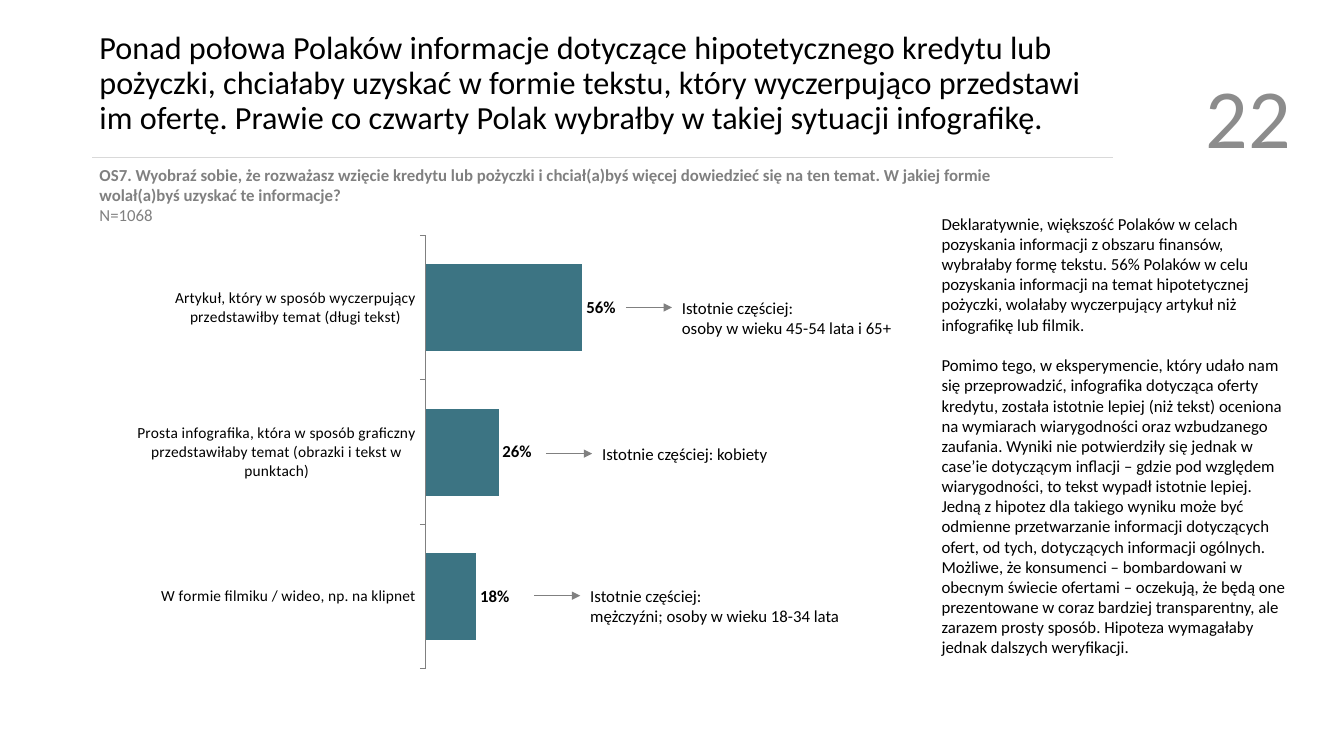
from typing import NamedTuple

from lxml.etree import SubElement
from pptx import Presentation
from pptx.chart.data import CategoryChartData
from pptx.dml.color import RGBColor
from pptx.enum.chart import XL_CHART_TYPE, XL_LABEL_POSITION, XL_TICK_MARK
from pptx.enum.shapes import MSO_CONNECTOR, MSO_SHAPE
from pptx.enum.text import MSO_ANCHOR, PP_ALIGN
from pptx.oxml import parse_xml
from pptx.oxml.ns import nsdecls, qn
from pptx.util import Pt

FONT = "Calibri"
BLACK, GRAY, TEAL = "000000", "808080", "3C7483"
ARROW_LENGTH = 33


class Box(NamedTuple):
    left: float
    top: float
    width: float
    height: float


class Callout(NamedTuple):
    arrow_left: float
    middle: float
    label_width: float
    lines: list[str]


TITLE = (
    "Ponad połowa Polaków informacje dotyczące hipotetycznego kredytu lub pożyczki, "
    "chciałaby uzyskać w formie tekstu, który wyczerpująco przedstawi im ofertę. "
    "Prawie co czwarty Polak wybrałby w takiej sytuacji infografikę."
)
QUESTION = (
    "OS7. Wyobraź sobie, że rozważasz wzięcie kredytu lub pożyczki i chciał(a)byś więcej "
    "dowiedzieć się na ten temat. W jakiej formie wolał(a)byś uzyskać te informacje?"
)
COMMENTARY = [
    "Deklaratywnie, większość Polaków w celach pozyskania informacji z obszaru finansów, "
    "wybrałaby formę tekstu. 56% Polaków w celu pozyskania informacji na temat hipotetycznej "
    "pożyczki, wolałaby wyczerpujący artykuł niż infografikę lub filmik.",
    "Pomimo tego, w eksperymencie, który udało nam się przeprowadzić, infografika dotycząca "
    "oferty kredytu, została istotnie lepiej (niż tekst) oceniona na wymiarach wiarygodności "
    "oraz wzbudzanego zaufania. Wyniki nie potwierdziły się jednak w case’ie dotyczącym "
    "inflacji – gdzie pod względem wiarygodności, to tekst wypadł istotnie lepiej. Jedną z "
    "hipotez dla takiego wyniku może być odmienne przetwarzanie informacji dotyczących ofert, "
    "od tych, dotyczących informacji ogólnych. Możliwe, że konsumenci – bombardowani w obecnym "
    "świecie ofertami – oczekują, że będą one prezentowane w coraz bardziej transparentny, ale "
    "zarazem prosty sposób. Hipoteza wymagałaby jednak dalszych weryfikacji.",
]
ANSWERS = {
    "Artykuł, który w sposób wyczerpujący przedstawiłby temat (długi tekst)": 0.56,
    "Prosta infografika, która w sposób graficzny przedstawiłaby temat "
    "(obrazki i tekst w punktach)": 0.26,
    "W formie filmiku / wideo, np. na klipnet": 0.18,
}
CALLOUTS = [
    Callout(447, 219.6, 259, ["Istotnie częściej:", "osoby w wieku 45-54 lata i 65+"]),
    Callout(390, 324, 223, ["Istotnie częściej: kobiety"]),
    Callout(381.5, 425.5, 310, ["Istotnie częściej:", "mężczyźni; osoby w wieku 18-34 lata"]),
]


def color(value: str) -> RGBColor:
    return RGBColor.from_string(value)


def set_font(font, size: float, value: str = BLACK, bold: bool = False) -> None:
    font.name, font.size, font.bold = FONT, Pt(size), bold
    font.color.rgb = color(value)


def fill_text(shape, texts: list[str], size: float, value: str = BLACK, gap: float = 0) -> None:
    """Write one left-aligned paragraph per text, with the gap between them."""
    frame = shape.text_frame
    frame.word_wrap = True
    frame.text = "\n".join(texts)
    for index, paragraph in enumerate(frame.paragraphs):
        paragraph.alignment = PP_ALIGN.LEFT
        if index:
            paragraph.space_before = Pt(gap)
        for run in paragraph.runs:
            set_font(run.font, size, value)


def add_text(slide, box: Box, text: str, size: float, value: str = BLACK):
    shape = slide.shapes.add_textbox(*map(Pt, box))
    fill_text(shape, [text], size, value)
    return shape


def add_line(slide, left: float, right: float, y: float, value: str, width: float):
    line = slide.shapes.add_connector(
        MSO_CONNECTOR.STRAIGHT, Pt(left), Pt(y), Pt(right), Pt(y))
    line.line.color.rgb = color(value)
    line.line.width = Pt(width)
    SubElement(line.line._get_or_add_ln().getparent(), qn("a:effectLst"))
    return line


def add_callout(slide, callout: Callout) -> None:
    label_left = callout.arrow_left + ARROW_LENGTH
    height = 7.2 + 14.4 * len(callout.lines)
    arrow = add_line(slide, callout.arrow_left, label_left, callout.middle, GRAY, 0.5)
    SubElement(arrow.line._get_or_add_ln(), qn("a:tailEnd"), type="triangle")
    box = Box(label_left, callout.middle - 10.8, callout.label_width, height)
    label = add_text(slide, box, "\v".join(callout.lines), 12)
    if len(callout.lines) == 1:
        arrow.end_connect(label, 1)


def add_answer_chart(slide, box: Box) -> None:
    data = CategoryChartData(number_format="0%")
    data.categories = list(ANSWERS)
    data.add_series("Series 1", list(ANSWERS.values()))
    chart = slide.shapes.add_chart(
        XL_CHART_TYPE.BAR_CLUSTERED, *map(Pt, box), data).chart
    chart.has_legend = chart.has_title = False
    set_font(chart.font, 10)

    answers = chart.category_axis
    answers.reverse_order = True
    answers.major_tick_mark = XL_TICK_MARK.OUTSIDE
    answers.has_major_gridlines = False
    answers.format.line.color.rgb = color(GRAY)
    answers.format.line.width = Pt(0.75)
    set_font(answers.tick_labels.font, 11)
    shares = chart.value_axis
    shares.minimum_scale, shares.maximum_scale = 0, 1
    shares.has_major_gridlines = shares.visible = False

    plot = chart.plots[0]
    plot.gap_width = 66
    plot.vary_by_categories = False
    bars = plot.series[0]
    bars.format.fill.solid()
    bars.format.fill.fore_color.rgb = color(TEAL)
    labels = bars.data_labels
    labels.show_value = True
    labels.number_format, labels.number_format_is_linked = "0%", False
    labels.position = XL_LABEL_POSITION.OUTSIDE_END
    set_font(labels.font, 12, bold=True)

    plot_area = answers._element.getparent()
    for layout in plot_area.findall(qn("c:layout")):
        plot_area.remove(layout)
    plot_area.insert(0, parse_xml(
        f'<c:layout {nsdecls("c")}><c:manualLayout><c:layoutTarget val="inner"/>'
        '<c:xMode val="edge"/><c:yMode val="edge"/><c:x val="0.5"/><c:y val="0.01"/>'
        '<c:w val="0.45"/><c:h val="0.945"/></c:manualLayout></c:layout>'))


def main() -> None:
    presentation = Presentation()
    presentation.slide_width, presentation.slide_height = Pt(960), Pt(540)
    slide = presentation.slides.add_slide(presentation.slide_layouts[6])

    add_line(slide, 66, 795, 112.5, "D9D9D9", 0.75)
    number = add_text(slide, Box(815, 31, 114, 102), "22", 60, "8C8C8C")
    number.text_frame.paragraphs[0].alignment = PP_ALIGN.RIGHT
    title = add_text(slide, Box(64, 8, 728, 104.4), TITLE, 23)
    title.text_frame.paragraphs[0].line_spacing = 0.9
    for shape in (number, title):
        shape.text_frame.vertical_anchor = MSO_ANCHOR.MIDDLE

    question = add_text(slide, Box(64, 114, 659.5, 51), f"{QUESTION}\vN=1068", 12, GRAY)
    question.text_frame.paragraphs[0].runs[0].font.bold = True
    add_answer_chart(slide, Box(82.5, 165, 443.5, 327.5))
    for callout in CALLOUTS:
        add_callout(slide, callout)

    panel = slide.shapes.add_shape(MSO_SHAPE.RECTANGLE, *map(Pt, Box(665.5, 149, 263, 327)))
    panel.shadow.inherit = False
    panel.fill.solid()
    panel.fill.fore_color.rgb = color("FFFFFF")
    panel.line.fill.background()
    panel.text_frame.vertical_anchor = MSO_ANCHOR.TOP
    fill_text(panel, COMMENTARY, 12, gap=14.6)
    presentation.save("out.pptx")


if __name__ == "__main__":
    main()
